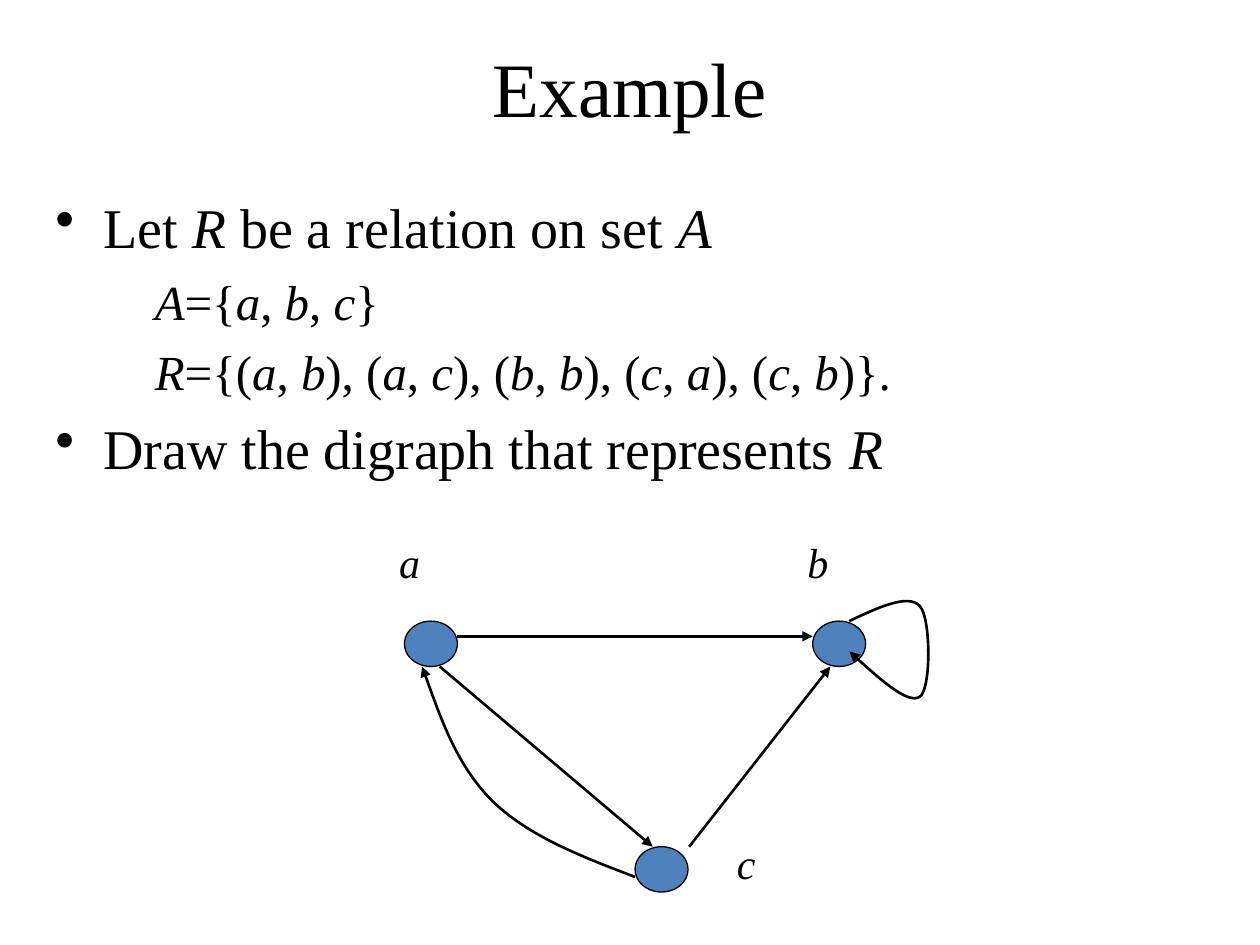
from lxml import etree
from pptx import Presentation, util as u
from pptx.dml.color import RGBColor
from pptx.enum import shapes, text
from pptx.oxml.ns import qn

BLACK, BLUE = "000000", "4F81BD"
NODE_WIDTH, NODE_HEIGHT = 0.42, 0.36

deck = Presentation()
deck.slide_width, deck.slide_height = u.Inches(10), u.Inches(7.5)
page = deck.slides.add_slide(deck.slide_layouts[6])


def add_text(frame, words, size, first=True, align=text.PP_ALIGN.LEFT,
             left=0, bullet=None, before=0):
    """Add a paragraph; words between asterisks are italic."""
    para = frame.paragraphs[0] if first else frame.add_paragraph()
    para.alignment = align
    para.space_before = u.Pt(before)
    props = para._p.get_or_add_pPr()
    props.set("marL", str(u.Inches(left)))
    if bullet:
        props.set("indent", str(-u.Inches(left)))
        etree.SubElement(props, qn("a:buChar"), char=bullet)
    for number, part in enumerate(words.split("*")):
        if part:
            span = para.add_run()
            span.text = part
            span.font.name = "Times New Roman"
            span.font.size = u.Pt(size)
            span.font.italic = number % 2 == 1
            span.font.color.rgb = RGBColor.from_string(BLACK)


def style_arrow(arrow):
    arrow.line.color.rgb = RGBColor.from_string(BLACK)
    arrow.line.width = u.Pt(1.5)
    etree.SubElement(arrow.line._get_or_add_ln(), qn("a:tailEnd"), type="triangle")
    etree.SubElement(arrow._element.spPr, qn("a:effectLst"))


# Title
title = page.shapes.add_textbox(u.Inches(0.5), u.Inches(0.18), u.Inches(9), u.Inches(1.01))
title.text_frame.word_wrap = True
title.text_frame.vertical_anchor = text.MSO_ANCHOR.MIDDLE
add_text(title.text_frame, "Example", 44, align=text.PP_ALIGN.CENTER)

# Statement of the exercise
body = page.shapes.add_textbox(u.Inches(0.34), u.Inches(1.48), u.Inches(9.32), u.Inches(2.65))
body.text_frame.word_wrap = True
main = dict(size=32, left=0.38, bullet="•", before=7.4)
detail = dict(size=28, left=0.79, before=6.5)
statement = [
    ("Let *R* be a relation on set *A*", main),
    ("*A*={*a*, *b*, *c*}", detail),
    ("*R*={(*a*, *b*), (*a*, *c*), (*b*, *b*), (*c*, *a*), (*c*, *b*)}.", detail),
    ("Draw the digraph that represents *R*", main),
]
for number, (words, look) in enumerate(statement):
    add_text(body.text_frame, words, first=number == 0, **look)

# Vertices: name, node corner, label corner
vertices = [
    ("a", (3.21, 4.93), (3.07, 4.21)),
    ("b", (6.45, 4.93), (6.31, 4.21)),
    ("c", (5.04, 6.72), (5.75, 6.6)),
]
for name, (x, y), (label_x, label_y) in vertices:
    node = page.shapes.add_shape(shapes.MSO_SHAPE.OVAL, u.Inches(x), u.Inches(y),
                                 u.Inches(NODE_WIDTH), u.Inches(NODE_HEIGHT))
    node.shadow.inherit = False
    node.fill.solid()
    node.fill.fore_color.rgb = RGBColor.from_string(BLUE)
    node.line.color.rgb = RGBColor.from_string(BLACK)
    node.line.width = u.Pt(0.75)
    label = page.shapes.add_textbox(u.Inches(label_x), u.Inches(label_y),
                                    u.Inches(0.37), u.Inches(0.5))
    label.text_frame.word_wrap = False
    add_text(label.text_frame, f"*{name}*", 24)

# Straight edges: a to b, a to c, c to b
straight_edges = [
    ((3.63, 5.05), (6.45, 5.05)),
    ((3.49, 5.29), (5.18, 6.72)),
    ((5.47, 6.72), (6.59, 5.29)),
]
for start, end in straight_edges:
    edge = page.shapes.add_connector(shapes.MSO_CONNECTOR.STRAIGHT,
                                     *map(u.Inches, start + end))
    style_arrow(edge)

# Curved edges: the loop at b, then c to a; three points per Bezier segment
curved_edges = [
    [(6.74, 4.93), (6.97, 4.82), (7.21, 4.71), (7.3, 4.81), (7.39, 4.91),
     (7.39, 5.47), (7.3, 5.53), (7.21, 5.59), (6.97, 5.38), (6.74, 5.17)],
    [(5.04, 6.96), (4.62, 6.8), (4.2, 6.64), (3.91, 6.36),
     (3.63, 6.08), (3.49, 5.68), (3.35, 5.29)],
]
for start, *points in curved_edges:
    builder = page.shapes.build_freeform(*map(u.Inches, start), scale=1.0)
    builder.add_line_segments([(u.Inches(x), u.Inches(y)) for x, y in points], close=False)
    edge = builder.convert_to_shape()
    edge.fill.background()
    style_arrow(edge)
    outline = next(edge._element.iter(qn("a:moveTo"))).getparent()
    steps = outline.findall(qn("a:lnTo"))
    for first in range(0, len(steps), 3):
        curve = etree.SubElement(outline, qn("a:cubicBezTo"))
        for step in steps[first:first + 3]:
            curve.append(step[0])
            outline.remove(step)

deck.save("out.pptx")
